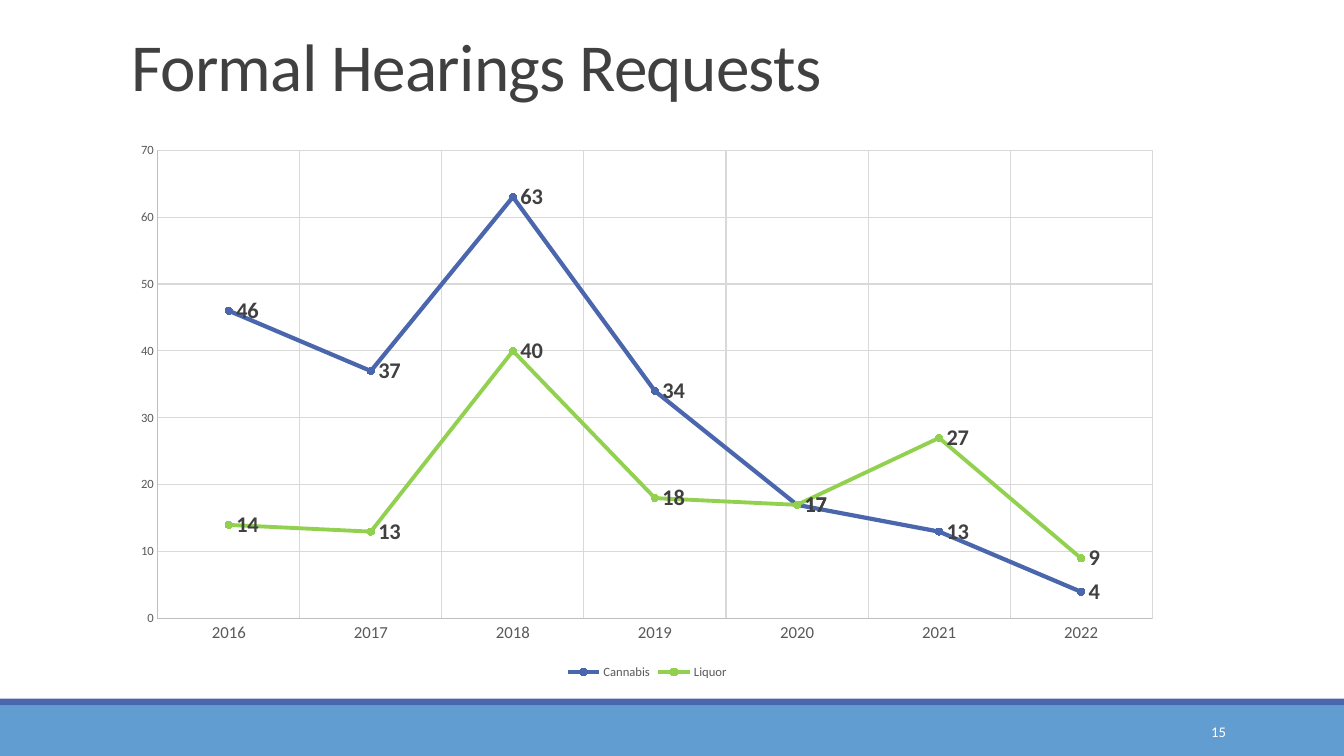
from lxml import etree
from pptx import Presentation
from pptx.chart.data import CategoryChartData
from pptx.dml.color import RGBColor
from pptx.enum.chart import (XL_CHART_TYPE, XL_LABEL_POSITION, XL_LEGEND_POSITION,
                             XL_MARKER_STYLE, XL_TICK_MARK)
from pptx.enum.shapes import MSO_SHAPE
from pptx.enum.text import MSO_ANCHOR, PP_ALIGN
from pptx.util import Pt

LINE_MARKERS = XL_CHART_TYPE.LINE_MARKERS
LABEL_RIGHT = XL_LABEL_POSITION.RIGHT
LEGEND_BOTTOM = XL_LEGEND_POSITION.BOTTOM
CIRCLE = XL_MARKER_STYLE.CIRCLE
NO_TICK = XL_TICK_MARK.NONE
RECTANGLE = MSO_SHAPE.RECTANGLE
TOP, MIDDLE = MSO_ANCHOR.TOP, MSO_ANCHOR.MIDDLE
LEFT, RIGHT = PP_ALIGN.LEFT, PP_ALIGN.RIGHT

WHITE = RGBColor(0xFF, 0xFF, 0xFF)
BLACK = RGBColor(0, 0, 0)
DARK = RGBColor(0x40, 0x40, 0x40)
GRAY = RGBColor(0x59, 0x59, 0x59)
AXIS = RGBColor(0xBF, 0xBF, 0xBF)
GRID = RGBColor(0xD9, 0xD9, 0xD9)
SKY = RGBColor(0x62, 0x9D, 0xD1)
BLUE = RGBColor(0x4A, 0x66, 0xAC)
GREEN = RGBColor(0x92, 0xD0, 0x50)

WIDTH, HEIGHT = 960, 540
FONT = "Calibri"
YEARS = [str(year) for year in range(2016, 2023)]
REQUESTS = [
    ("Cannabis", [46, 37, 63, 34, 17, 13, 4], BLUE, 3),
    ("Liquor", [14, 13, 40, 18, 17, 27, 9], GREEN, 2.75),
]


def style_font(font, size, color, bold=False):
    font.name, font.size, font.bold = FONT, Pt(size), bold
    font.color.rgb = color


def style_line(line, color, width):
    line.color.rgb = color
    line.width = Pt(width)


def write_text(frame, text, *, size, color, align=LEFT, anchor=TOP,
               line_spacing=None, tracking=None):
    """Fill a text frame; tracking is in hundredths of a point."""
    frame.word_wrap = True
    frame.vertical_anchor = anchor
    paragraph = frame.paragraphs[0]
    paragraph.alignment = align
    paragraph.line_spacing = line_spacing
    run = paragraph.add_run()
    run.text = text
    style_font(run.font, size, color)
    if tracking is not None:
        run.font._element.set("spc", str(tracking))


def place_plot(chart, **fractions):
    """Fix the inner plot area, as fractions of the chart."""
    plot_area = chart._chartSpace.chart.plotArea
    for old in plot_area.findall("{*}layout"):
        plot_area.remove(old)
    namespace = etree.QName(plot_area).namespace

    def add(parent, tag, **attributes):
        return etree.SubElement(parent, f"{{{namespace}}}{tag}", attributes)

    layout = etree.Element(f"{{{namespace}}}layout")
    manual = add(layout, "manualLayout")
    add(manual, "layoutTarget", val="inner")
    for side in ("xMode", "yMode"):
        add(manual, side, val="edge")
    for side, fraction in fractions.items():
        add(manual, side, val=str(fraction))
    plot_area.insert(0, layout)


class SlideBuilder:
    def __init__(self, presentation):
        self.slide = presentation.slides.add_slide(presentation.slide_layouts[5])

    def band(self, top, height, color):
        band = self.slide.shapes.add_shape(RECTANGLE, 0, Pt(top), Pt(WIDTH), Pt(height))
        band.shadow.inherit = False
        band.fill.solid()
        band.fill.fore_color.rgb = color
        band.line.fill.background()

    def title(self, text, left, top, width, height, **style):
        title = self.slide.shapes.title
        title.left, title.top = Pt(left), Pt(top)
        title.width, title.height = Pt(width), Pt(height)
        write_text(title.text_frame, text, **style)

    def text(self, text, left, top, width, height, **style):
        box = self.slide.shapes.add_textbox(Pt(left), Pt(top), Pt(width), Pt(height))
        write_text(box.text_frame, text, **style)

    def axis(self, axis, size):
        axis.major_tick_mark = axis.minor_tick_mark = NO_TICK
        axis.has_major_gridlines = True
        style_font(axis.tick_labels.font, size, GRAY)
        style_line(axis.format.line, AXIS, 0.75)
        style_line(axis.major_gridlines.format.line, GRID, 0.75)

    def series(self, series, color, width):
        series.smooth = False
        style_line(series.format.line, color, width)
        marker = series.marker
        marker.style, marker.size = CIRCLE, 5
        marker.format.fill.solid()
        marker.format.fill.fore_color.rgb = color
        style_line(marker.format.line, color, 0.75)
        labels = series.data_labels
        labels.show_value = True
        labels.position = LABEL_RIGHT
        style_font(labels.font, 16, DARK, bold=True)

    def line_chart(self, left, top, width, height):
        data = CategoryChartData(number_format="0")
        data.categories = YEARS
        for name, counts, _, _ in REQUESTS:
            data.add_series(name, counts)
        chart = self.slide.shapes.add_chart(
            LINE_MARKERS, Pt(left), Pt(top), Pt(width), Pt(height), data).chart
        style_font(chart.font, 10, BLACK)
        chart.has_title = False
        chart.has_legend = True
        chart.legend.position = LEGEND_BOTTOM
        chart.legend.include_in_layout = False
        style_font(chart.legend.font, 9, GRAY)
        self.axis(chart.category_axis, 12)
        self.axis(chart.value_axis, 9)
        chart.value_axis.minimum_scale = 0
        chart.value_axis.maximum_scale = 70
        chart.value_axis.major_unit = 10
        chart.plots[0].vary_by_categories = False
        for series, (_, _, color, line_width) in zip(chart.plots[0].series, REQUESTS):
            self.series(series, color, line_width)
        place_plot(chart, x=0.035, y=0.033, w=0.945, h=0.85)


def main():
    presentation = Presentation()
    presentation.slide_width, presentation.slide_height = Pt(WIDTH), Pt(HEIGHT)
    hearings = SlideBuilder(presentation)
    hearings.band(504, 36, SKY)
    hearings.band(499, 5, BLUE)
    hearings.title("Formal Hearings Requests", 86.4, 22.3, 792, 114.5,
                   size=48, color=DARK, line_spacing=0.85, tracking=-50)
    hearings.line_chart(86.4, 94.3, 751.7, 393.8)
    hearings.text("15", 779.8, 508.3, 103, 28.8,
                  size=10.5, color=WHITE, align=RIGHT, anchor=MIDDLE)
    presentation.save("out.pptx")


if __name__ == "__main__":
    main()
